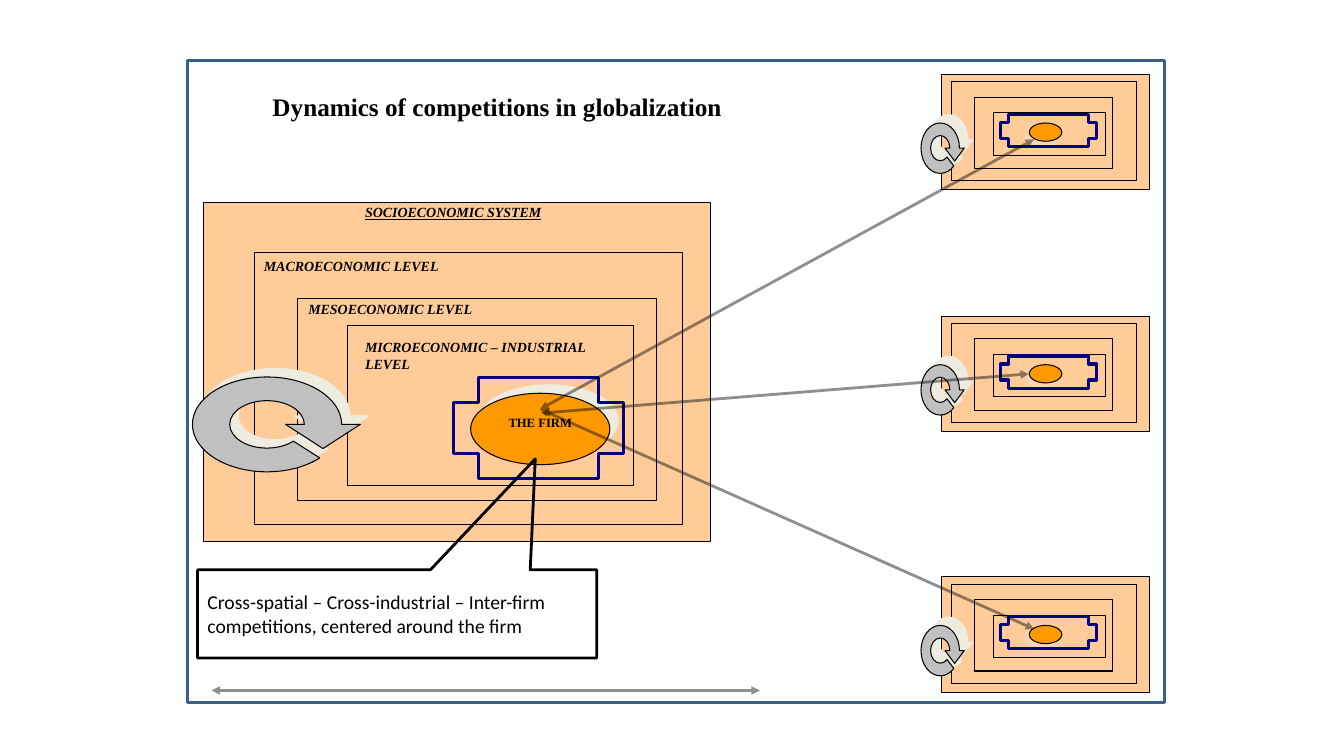
from math import cos, radians, sin, tan

from lxml.etree import SubElement
from pptx import Presentation
from pptx.dml.color import RGBColor
from pptx.enum.shapes import MSO_CONNECTOR, MSO_SHAPE
from pptx.enum.text import MSO_ANCHOR, PP_ALIGN
from pptx.oxml.ns import qn
from pptx.util import Cm, Pt

SERIF = "Times New Roman"
HARD_SHADOW = ("EEECE1", 100, 0, 8.5, 315)
SOFT_SHADOW = ("EEECE1", 43, 4, 4, 133)

# Boxes inside a system, in cm from its top left corner
MAIN_PARTS = {
    "levels": [(2.37, 2.42, 9.05, 5.08), (1.29, 1.25, 10.77, 6.87), (3.63, 3.09, 7.21, 4.03)],
    "firm": (6.73, 4.8, 3.51, 1.8),
    "cycle": (-0.28, 4.39, 3.76, 2.39),
    "cross": (6.3, 4.4, 4.29, 2.55),
}
SMALL_PARTS = {
    "levels": [(0.84, 0.57, 3.48, 1.8), (0.25, 0.18, 4.67, 2.5), (1.32, 0.96, 2.83, 1.07)],
    "firm": (2.22, 1.22, 0.82, 0.46),
    "cycle": (-0.51, 1.22, 0.97, 1.27),
    "cross": (1.5, 1, 2.42, 0.81),
}
LEVEL_LABELS = [
    ("SOCIOECONOMIC SYSTEM", (3.82, -0.1, 8.76, 0.69), True),
    ("MACROECONOMIC LEVEL", (1.27, 1.26, 5.94, 0.69), False),
    ("MICROECONOMIC – INDUSTRIAL LEVEL", (3.82, 3.3, 6.86, 1.12), False),
    ("MESOECONOMIC LEVEL", (2.39, 2.34, 5.66, 0.69), False),
]


def rgb(value):
    return RGBColor.from_string(value)


def inside(box, part):
    """Move a part from the corner of its box to slide coordinates."""
    return (box[0] + part[0], box[1] + part[1], part[2], part[3])


def style(shape, fill=None, line="000000", width=0.75, shadow=None):
    if fill:
        shape.fill.solid()
        shape.fill.fore_color.rgb = rgb(fill)
    else:
        shape.fill.background()
    shape.line.color.rgb = rgb(line)
    shape.line.width = Pt(width)
    shape.shadow.inherit = False
    if shadow:
        color, alpha, blur, dist, angle = shadow
        effects = shape.element.spPr.find(qn("a:effectLst"))
        outer = SubElement(effects, qn("a:outerShdw"), blurRad=str(Pt(blur)), dist=str(Pt(dist)),
                           dir=str(angle * 60000), algn="ctr", rotWithShape="0")
        clr = SubElement(outer, qn("a:srgbClr"), val=color)
        SubElement(clr, qn("a:alpha"), val=str(alpha * 1000))


def add_box(s, kind, box, **look):
    shape = s.shapes.add_shape(kind, *map(Cm, box))
    style(shape, **look)
    return shape


def write(tf, text, size, font=SERIF, align=PP_ALIGN.LEFT, bold=True, italic=False, underline=False):
    tf.word_wrap = True
    p = tf.paragraphs[0]
    p.alignment = align
    r = p.add_run()
    r.text = text
    r.font.name, r.font.size = font, Pt(size)
    r.font.bold, r.font.italic, r.font.underline = bold, italic, underline
    r.font.color.rgb = rgb("000000")


def add_text(s, box, text, size, **look):
    tf = s.shapes.add_textbox(*map(Cm, box)).text_frame
    write(tf, text, size, **look)
    return tf


def arc(radius, start, end):
    """Two control points and the end point of a Bézier arc, angles in degrees."""
    a, b = radians(start), radians(end)
    k = 4 / 3 * tan((b - a) / 4)
    unit = [(cos(a) - k * sin(a), sin(a) + k * cos(a)),
            (cos(b) + k * sin(b), sin(b) - k * cos(b)), (cos(b), sin(b))]
    return [(radius * x, radius * y) for x, y in unit]


def add_cycle(s, box):
    """Ring open at the lower right that ends in an arrowhead."""
    left, top, width, height = box
    rx, ry = width / 2, height / 2
    inner = [arc(0.5, a, b) for a, b in ((0, -90), (-90, -180), (-180, -270), (-270, -315))]
    outer = [arc(1, a, b) for a, b in ((45, 90), (90, 180), (180, 270), (270, 360))]
    tail = [[(cos(radians(45)), sin(radians(45)))]]
    arrowhead = [[(1, 0)], [(1.25, 0)], [(0.75, 0.51)], [(0.25, 0)], [(0.5, 0)]]
    steps = inner + tail + outer + arrowhead

    def place(x, y):
        return Cm(left + rx + x * rx), Cm(top + ry + y * ry)

    builder = s.shapes.build_freeform(*place(0.5, 0))
    builder.add_line_segments([place(*point) for step in steps for point in step], close=True)
    shape = builder.convert_to_shape()
    segments = iter(list(shape.element.iter(qn("a:lnTo"))))
    for step in steps:
        first, *others = [next(segments) for _ in step]
        if others:
            curve = first.makeelement(qn("a:cubicBezTo"))
            first.addprevious(curve)
            for segment in (first, *others):
                curve.append(segment[0])
                segment.getparent().remove(segment)
    style(shape, fill="C0C0C0", shadow=HARD_SHADOW)


def add_system(s, box, parts, firm_shadow):
    """Nested economic levels around a firm."""
    add_box(s, MSO_SHAPE.RECTANGLE, box, fill="FFCC99")
    for level in parts["levels"]:
        add_box(s, MSO_SHAPE.RECTANGLE, inside(box, level))
    add_box(s, MSO_SHAPE.OVAL, inside(box, parts["firm"]), fill="FF9900", shadow=firm_shadow)
    add_cycle(s, inside(box, parts["cycle"]))
    cross = add_box(s, MSO_SHAPE.CROSS, inside(box, parts["cross"]), line="000080", width=2.25)
    cross.adjustments[0] = 0.25


def add_labels(s, box):
    for text, place, underline in LEVEL_LABELS:
        add_text(s, inside(box, place), text, 10, italic=True, underline=underline)
    add_text(s, inside(box, (6.3, 5.21, 4.37, 0.64)), "THE FIRM", 9, align=PP_ALIGN.CENTER)


def add_arrow(s, start, end):
    """Translucent line with a head at both ends."""
    c = s.shapes.add_connector(MSO_CONNECTOR.STRAIGHT, *map(Cm, start + end))
    c.line.color.rgb = rgb("000000")
    c.line.width = Pt(2)
    ln = c.element.spPr.find(qn("a:ln"))
    SubElement(ln.find(".//" + qn("a:srgbClr")), qn("a:alpha"), val="44000")
    for tag in ("a:headEnd", "a:tailEnd"):
        SubElement(ln, qn(tag), type="triangle")
    SubElement(c.element.spPr, qn("a:effectLst"))


def add_callout(s, box, text):
    shape = add_box(s, MSO_SHAPE.RECTANGULAR_CALLOUT, box, width=2)
    shape.adjustments[0] = 0.346
    shape.adjustments[1] = -1.76
    shape.text_frame.vertical_anchor = MSO_ANCHOR.MIDDLE
    write(shape.text_frame, text, 14, font="Calibri", bold=False)


def main():
    prs = Presentation()
    prs.slide_width, prs.slide_height = Cm(33.87), Cm(19.05)
    s = prs.slides.add_slide(prs.slide_layouts[6])

    title = add_text(s, (5.81, 2.13, 13.44, 1.12), "Dynamics of competitions in globalization", 18,
                     align=PP_ALIGN.CENTER)
    title.vertical_anchor = MSO_ANCHOR.MIDDLE

    main_box = (5.13, 5.11, 12.78, 8.53)
    add_system(s, main_box, MAIN_PARTS, HARD_SHADOW)
    add_labels(s, main_box)
    add_box(s, MSO_SHAPE.RECTANGLE, (4.72, 1.52, 24.62, 16.18), line="3A5F8C", width=2)
    for top in (1.88, 14.54, 7.97):
        add_system(s, (23.72, top, 5.24, 2.9), SMALL_PARTS, SOFT_SHADOW)

    add_arrow(s, (13.61, 10.31), (26.06, 3.51))
    add_arrow(s, (13.64, 10.41), (25.93, 9.42))
    add_arrow(s, (13.61, 10.31), (26.06, 15.85))
    add_arrow(s, (5.33, 17.4), (19.15, 17.4))
    add_callout(s, (4.98, 14.36, 10.06, 2.22),
                "Cross-spatial – Cross-industrial – Inter-firm competitions, centered around the firm")
    prs.save("out.pptx")


if __name__ == "__main__":
    main()
